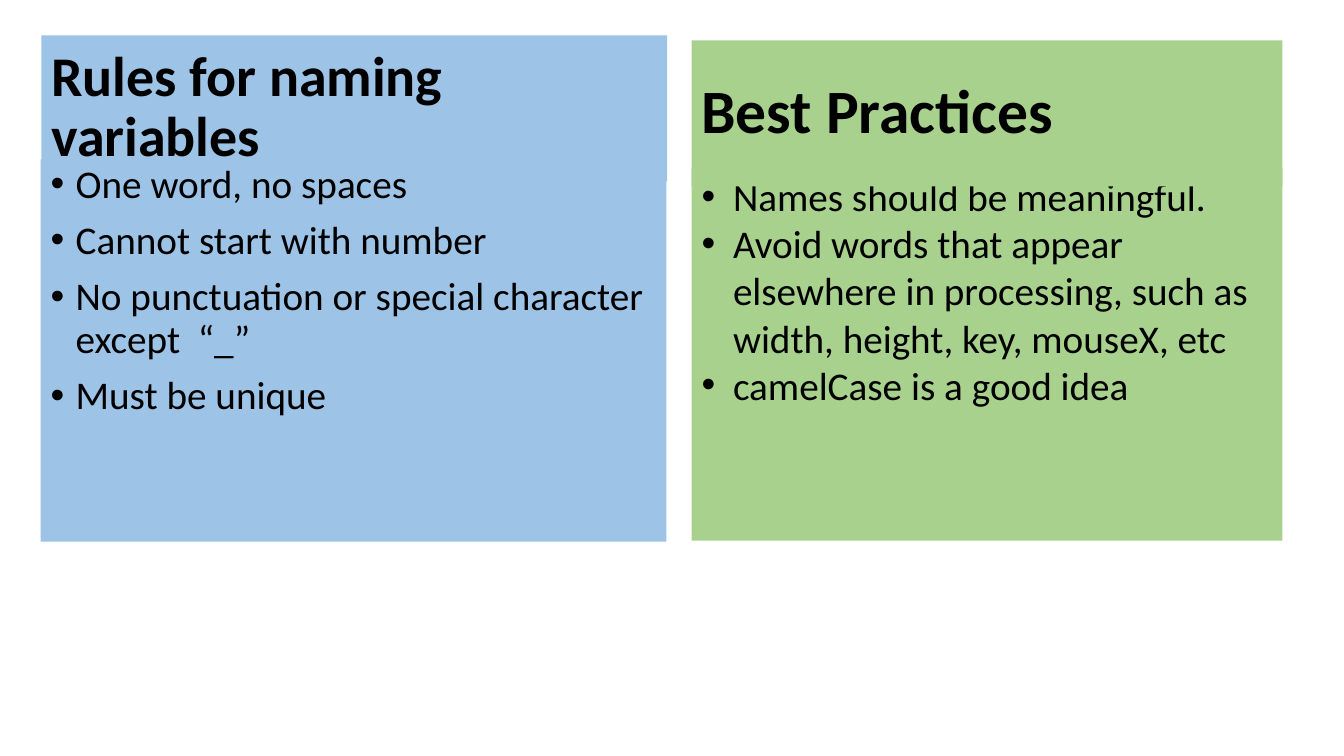
import dataclasses

import pptx
import pptx.dml.color
import pptx.enum.text
import pptx.util
from lxml import etree
from pptx.oxml.ns import qn

Pt = pptx.util.Pt


@dataclasses.dataclass(frozen=True)
class Theme:
    font: str = "Calibri"
    text: str = "000000"
    rules: str = "9DC3E6"
    practices: str = "A9D18E"
    title_size: int = 40
    heading_size: int = 44
    list_size: int = 28


theme = Theme()


def fill_panel(shape, box, color, lines, size, bold=False, line_spacing=1.0):
    """Place a filled panel and set its left-aligned text."""
    shape.left, shape.top, shape.width, shape.height = (Pt(length) for length in box)
    shape.fill.solid()
    shape.fill.fore_color.rgb = pptx.dml.color.RGBColor.from_string(color)
    frame = shape.text_frame
    frame.text = "\n".join(lines)
    frame.word_wrap = True
    frame.auto_size = pptx.enum.text.MSO_AUTO_SIZE.NONE
    anchors = pptx.enum.text.MSO_ANCHOR
    frame.vertical_anchor = anchors.MIDDLE if bold else anchors.TOP
    for paragraph in frame.paragraphs:
        paragraph.alignment = pptx.enum.text.PP_ALIGN.LEFT
        paragraph.line_spacing = line_spacing
        for run in paragraph.runs:
            run.font.name = theme.font
            run.font.size = Pt(size)
            run.font.bold = bold
            run.font.color.rgb = pptx.dml.color.RGBColor.from_string(theme.text)


def add_bullets(shape, indent, space_before):
    """Give every paragraph a hanging bullet."""
    for paragraph in shape.text_frame.paragraphs:
        paragraph.space_before = Pt(space_before)
        properties = paragraph._p.get_or_add_pPr()
        properties.set("marL", str(Pt(indent)))
        properties.set("indent", str(-Pt(indent)))
        etree.SubElement(properties, qn("a:buFont")).set("typeface", "Arial")
        etree.SubElement(properties, qn("a:buChar")).set("char", "•")


# Slide
presentation = pptx.Presentation()
presentation.slide_width = Pt(960)
presentation.slide_height = Pt(540)
slide = presentation.slides.add_slide(presentation.slide_layouts[5])

# Left column: rules
fill_panel(slide.shapes.title, (29.5, 25.2, 447, 104.4), theme.rules,
           ["Rules for naming variables"], theme.title_size, True, 0.9)

rules = slide.shapes.add_textbox(0, 0, 0, 0)
fill_panel(rules, (29, 113.8, 447, 273), theme.rules, [
    "One word, no spaces",
    "Cannot start with number",
    "No punctuation or special character except  “_”",
    "Must be unique",
], theme.list_size, line_spacing=0.9)
add_bullets(rules, 18, 10)

# Right column: best practices, with the heading in front of the list
practices = slide.shapes.add_textbox(0, 0, 0, 0)
fill_panel(practices, (494, 119.8, 422, 266.5), theme.practices, [
    "Names should be meaningful.",
    "Avoid words that appear elsewhere in processing, such as width, height, key, mouseX, etc",
    "camelCase is a good idea",
], theme.list_size)
add_bullets(practices, 22.5, 0)

heading = slide.shapes.add_textbox(0, 0, 0, 0)
fill_panel(heading, (494, 28.8, 422, 104.4), theme.practices,
           ["Best Practices"], theme.heading_size, True, 0.9)

presentation.save("out.pptx")
